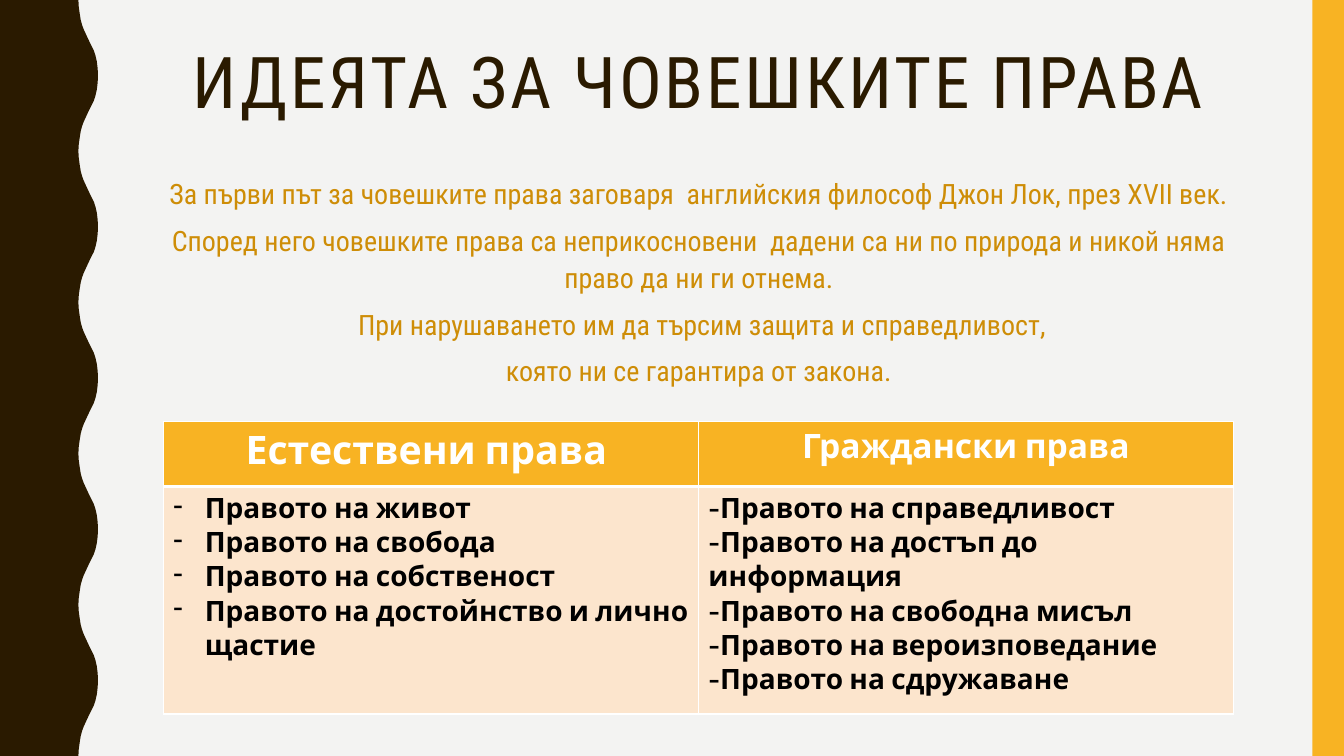
from lxml import etree
from pptx import Presentation
from pptx.dml.color import RGBColor
from pptx.enum.shapes import MSO_SHAPE
from pptx.enum.text import MSO_ANCHOR, MSO_AUTO_SIZE, PP_ALIGN
from pptx.oxml.ns import qn
from pptx.util import Pt

CENTER, LEFT = PP_ALIGN.CENTER, PP_ALIGN.LEFT
TOP = MSO_ANCHOR.TOP
NO_FIT = MSO_AUTO_SIZE.NONE
RECTANGLE = MSO_SHAPE.RECTANGLE

WIDTH, HEIGHT = 960, 540
WAVE_PERIOD = 108
# (x, y) of half a wave, from trough to crest
HALF_WAVE = [(56, 0), (56.3, 5), (57, 10), (57.7, 14.4), (58.7, 18),
             (59.8, 21), (61.2, 24), (62.6, 27), (64, 30), (65.5, 33),
             (67, 36), (68.2, 39.6), (69.2, 44), (69.8, 49), (70, 54)]

TITLE = "ИДЕЯТА ЗА ЧОВЕШКИТЕ ПРАВА"
IDEAS = [
    "За първи път за човешките права заговаря  английския философ Джон Лок, през XVII век.",
    "Според него човешките права са неприкосновени  дадени са ни по природа и никой няма право да ни ги отнема.",
    " При нарушаването им да търсим защита и справедливост,",
    "която ни се гарантира от закона.",
]
NATURAL_RIGHTS = [
    "Правото на живот",
    "Правото на свобода",
    "Правото на собственост",
    "Правото на достойнство и лично щастие",
]
CIVIL_RIGHTS = [
    "-Правото на справедливост",
    "-Правото на достъп до информация",
    "-Правото на свободна мисъл",
    "-Правото на вероизповедание",
    "-Правото на сдружаване",
]


def color(value):
    return RGBColor.from_string(value)


def set_values(target, values):
    for name, value in values.items():
        setattr(target, name, value)


class RightsSlide:
    dark, gold, ochre = "2A1A00", "F8B323", "CE8D07"
    paper, peach, white, black = "F3F3F2", "FCE5CD", "FFFFFF", "000000"
    text_font, table_font = "Roboto Condensed", "Cabin"

    def __init__(self, deck):
        self.slide = deck.slides.add_slide(deck.slide_layouts[1])
        self.paint(self.slide.background, self.paper)

    def paint(self, target, value):
        target.fill.solid()
        target.fill.fore_color.rgb = color(value)

    def plain(self, shape, value):
        self.paint(shape, value)
        shape.line.fill.background()
        shape.shadow.inherit = False

    def wavy_band(self):
        edge = []
        for start in range(0, HEIGHT, WAVE_PERIOD):
            edge += [(x, start + y) for x, y in HALF_WAVE]
            edge += [(x, start + WAVE_PERIOD - y) for x, y in HALF_WAVE[-2::-1]]
        outline = self.slide.shapes.build_freeform(0, 0)
        outline.add_line_segments([(Pt(x), Pt(y)) for x, y in edge + [(0, HEIGHT)]])
        self.plain(outline.convert_to_shape(), self.dark)

    def stripe(self, left, width):
        stripe = self.slide.shapes.add_shape(RECTANGLE, Pt(left), 0, Pt(width), Pt(HEIGHT))
        self.plain(stripe, self.gold)

    def fill_text(self, frame, lines, font, paragraph, ink, bullet=None):
        """Fill a text frame with one formatted paragraph per line."""
        for number, line in enumerate(lines):
            item = frame.add_paragraph() if number else frame.paragraphs[0]
            set_values(item, paragraph)
            props = item._p.get_or_add_pPr()
            indent = Pt(22.5) if bullet else 0
            props.set("marL", str(indent))
            props.set("indent", str(-indent))
            if bullet:
                etree.SubElement(props, qn("a:buChar"), char=bullet)
            else:
                etree.SubElement(props, qn("a:buNone"))
            run = item.add_run()
            run.text = line
            set_values(run.font, font)
            run.font.color.rgb = color(ink)

    def placeholder(self, index, box, lines, size, ink, paragraph, tracking=0):
        holder = self.slide.placeholders[index]
        set_values(holder, dict(zip(("left", "top", "width", "height"), map(Pt, box))))
        frame = holder.text_frame
        set_values(frame, {"word_wrap": True, "auto_size": NO_FIT, "vertical_anchor": TOP})
        font = {"name": self.text_font, "size": Pt(size), "bold": False}
        self.fill_text(frame, lines, font, {"alignment": CENTER, **paragraph}, ink)
        if tracking:
            for item in frame.paragraphs:
                item.runs[0]._r.get_or_add_rPr().set("spc", str(tracking * 100))

    def borders(self, cell, widths):
        for side, width in widths.items():
            line = etree.SubElement(cell._tc.get_or_add_tcPr(), qn("a:ln" + side),
                                    w=str(Pt(width)))
            fill = etree.SubElement(line, qn("a:solidFill"))
            etree.SubElement(fill, qn("a:srgbClr"), val=self.white)

    def cell(self, cell, lines, size, fill, ink, widths, align=LEFT, bullet=None):
        self.borders(cell, widths)
        self.paint(cell, fill)
        font = {"name": self.table_font, "size": Pt(size), "bold": True}
        self.fill_text(cell.text_frame, lines, font, {"alignment": align}, ink, bullet)

    def rights_table(self, left, top, column_width, row_heights, columns):
        """Draw a column for each (heading, heading size, rights, bullet)."""
        table = self.slide.shapes.add_table(
            2, len(columns), Pt(left), Pt(top),
            Pt(column_width * len(columns)), Pt(sum(row_heights))).table
        for row, height in zip(table.rows, row_heights):
            row.height = Pt(height)
        head_lines = {"L": 1, "R": 1, "T": 1, "B": 3}
        list_lines = {"L": 1, "R": 1, "T": 3, "B": 1}
        for index, (heading, size, rights, bullet) in enumerate(columns):
            table.columns[index].width = Pt(column_width)
            self.cell(table.cell(0, index), [heading], size, self.gold, self.white,
                      head_lines, CENTER)
            self.cell(table.cell(1, index), rights, 20, self.peach, self.black,
                      list_lines, bullet=bullet)


def main():
    deck = Presentation()
    deck.slide_width, deck.slide_height = Pt(WIDTH), Pt(HEIGHT)
    page = RightsSlide(deck)
    page.wavy_band()
    page.stripe(937.5, 22.5)
    page.placeholder(0, (98.6, 30.2, 801.4, 118), [TITLE], 51, page.dark,
                     {"line_spacing": 0.9}, tracking=2)
    page.placeholder(1, (98.6, 120.2, 801.4, 404), IDEAS, 20, page.ochre,
                     {"line_spacing": 1.1, "space_before": Pt(7)})
    page.rights_table(116.6, 301, 382.3, (46.6, 162.4), [
        ("Естествени права ", 28, NATURAL_RIGHTS, "-"),
        ("Граждански права", 24, CIVIL_RIGHTS, None),
    ])
    deck.save("out.pptx")


if __name__ == "__main__":
    main()
